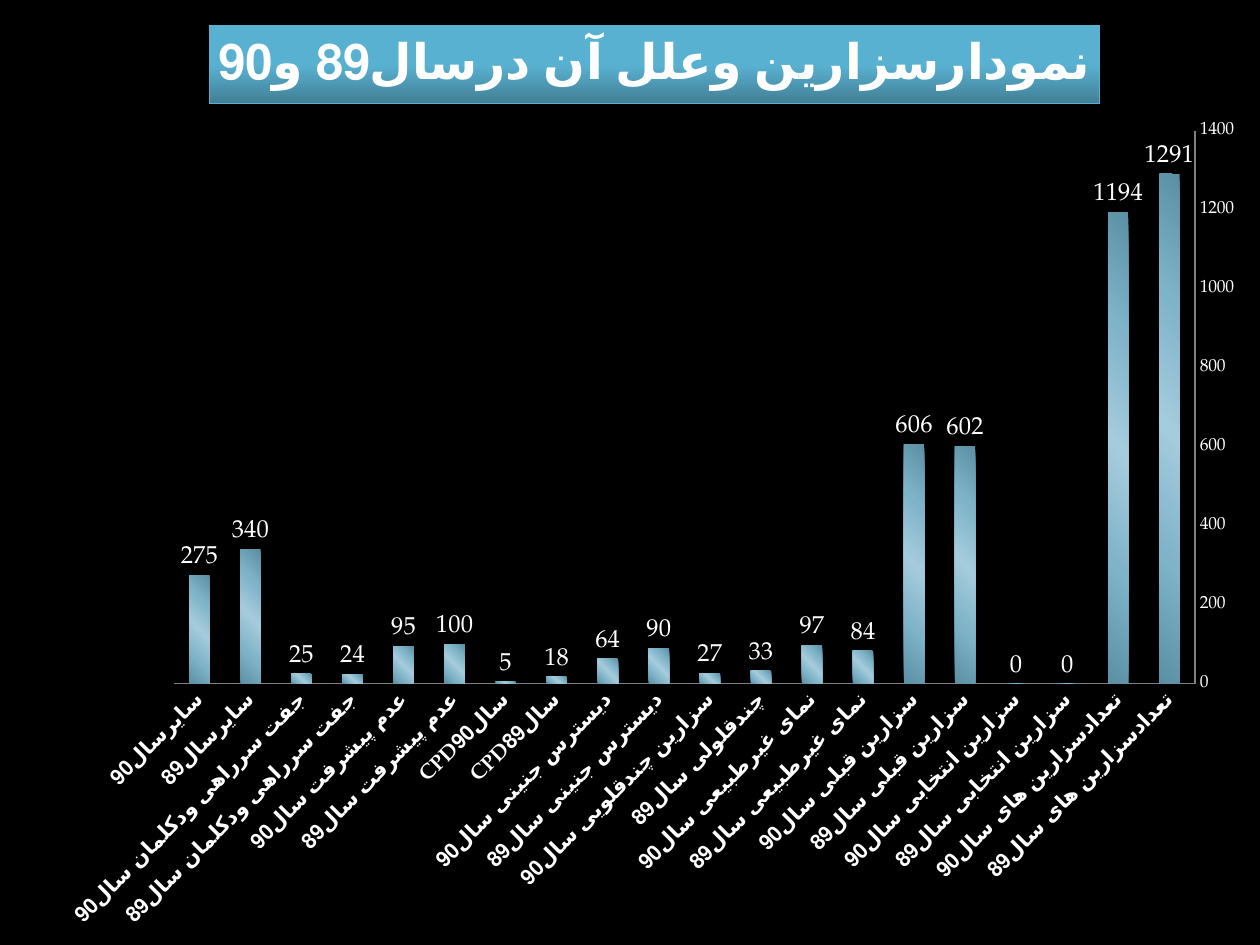
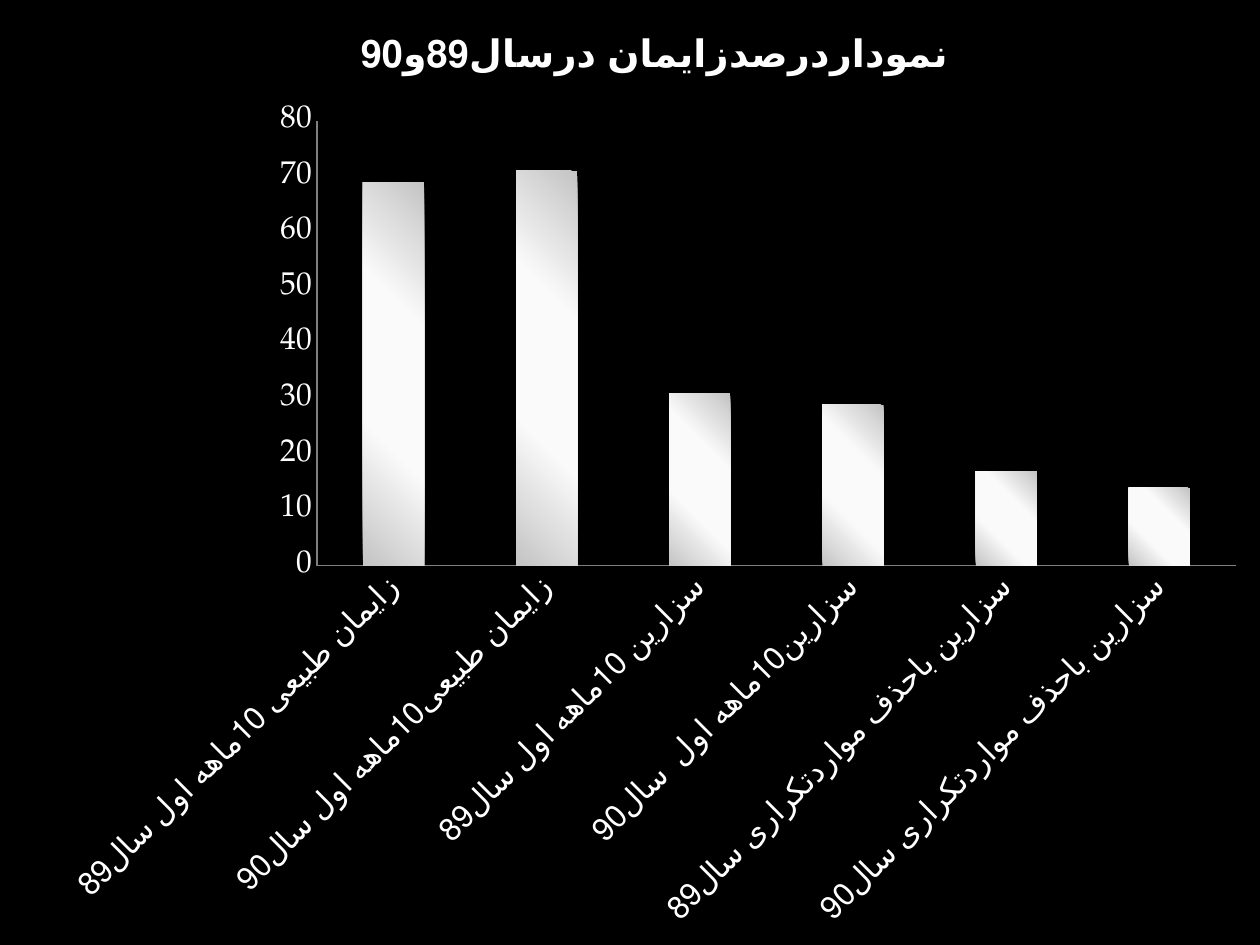
from dataclasses import dataclass

from lxml import etree
from pptx import Presentation
from pptx.chart.data import CategoryChartData
from pptx.dml.color import RGBColor
from pptx.enum.chart import XL_CHART_TYPE, XL_LABEL_POSITION, XL_TICK_MARK
from pptx.oxml.ns import qn
from pptx.util import Pt

COLUMNS = XL_CHART_TYPE.COLUMN_CLUSTERED
ABOVE_COLUMN = XL_LABEL_POSITION.OUTSIDE_END
NO_TICK = XL_TICK_MARK.NONE

EMU_PER_PX = 914400 / 126
SLIDE_SIZE = (1260, 945)
CHART_BOX = (49, 0, 1211, 945)


@dataclass(frozen=True)
class Theme:
    font: str = "TeX Gyre Pagella"
    background: str = "000000"
    text: str = "FFFFFF"
    axis: str = "808080"
    banner: tuple = ("59B1D1", "59B1D1", "427F95")
    banner_edge: str = "59B1D1"
    blue_columns: tuple = ("5B8FA3", "7FB3C8", "A5CCDC", "7FB3C8", "5B8FA3")
    white_columns: tuple = ("C4C4C4", "FAFAFA", "FAFAFA", "C4C4C4")
    banner_size: int = 28
    title_size: float = 21.6
    large: int = 18
    value_label: int = 14
    category: int = 12
    small: int = 10


THEME = Theme()

CAUSES = [
    ("تعدادسزارین های سال89", 1291),
    ("تعدادسزارین های سال90", 1194),
    ("سزارین انتخابی سال89", 0),
    ("سزارین انتخابی سال90", 0),
    ("سزارین قبلی سال89", 602),
    ("سزارین قبلی سال90", 606),
    ("نمای غیرطبیعی سال89", 84),
    ("نمای غیرطبیعی سال90", 97),
    ("چندقلولی سال89", 33),
    ("سزارین چندقلویی سال90", 27),
    ("دیسترس جنینی سال89", 90),
    ("دیسترس جنینی سال90", 64),
    ("CPDسال89", 18),
    ("CPDسال90", 5),
    ("عدم پیشرفت سال89", 100),
    ("عدم پیشرفت سال90", 95),
    ("جفت سرراهی ودکلمان سال89", 24),
    ("جفت سرراهی ودکلمان سال90", 25),
    ("سایرسال89", 340),
    ("سایرسال90", 275),
]

BIRTH_PERCENTAGES = [
    ("زایمان طبیعی 10ماهه اول سال89", 69),
    ("زایمان طبیعی10ماهه اول سال90", 71),
    ("سزارین 10ماهه اول سال89", 31),
    ("سزارین10ماهه اول  سال90", 29),
    ("سزارین باحذف مواردتکراری سال89", 17),
    ("سزارین باحذف مواردتکراری سال90", 14),
]


def px(length):
    return round(length * EMU_PER_PX)


def rgb(colour):
    return RGBColor.from_string(colour)


def style_font(font, size, bold=False):
    font.name = THEME.font
    font.size = Pt(size)
    font.bold = bold
    font.color.rgb = rgb(THEME.text)


def fill_gradient(part, stops_path, chart, colours, angle):
    """Spread the colours evenly along a linear gradient."""
    part.format.fill.gradient()
    part.format.fill.gradient_angle = angle
    stops = chart.element.xpath(stops_path)[0]
    for stop in list(stops):
        stops.remove(stop)
    for index, colour in enumerate(colours):
        position = round(100000 * index / (len(colours) - 1))
        stop = etree.SubElement(stops, qn("a:gs"), pos=str(position))
        etree.SubElement(stop, qn("a:srgbClr"), val=colour)


def place_plot(chart, box, plot_box):
    """Fix the inner plot area, given in px within the chart box."""
    plot_area = chart.element.xpath(".//c:plotArea")[0]
    for automatic in plot_area.findall(qn("c:layout")):
        plot_area.remove(automatic)
    layout = etree.Element(qn("c:layout"))
    plot_area.insert(0, layout)
    manual = etree.SubElement(layout, qn("c:manualLayout"))
    left, top, width, height = plot_box
    settings = {
        "layoutTarget": "inner", "xMode": "edge", "yMode": "edge",
        "x": left / box[2], "y": top / box[3],
        "w": width / box[2], "h": height / box[3],
    }
    for tag, value in settings.items():
        text = value if isinstance(value, str) else f"{value:.4f}"
        etree.SubElement(manual, qn(f"c:{tag}"), val=text)


def set_title(chart, text, size):
    frame = chart.chart_title.text_frame
    run = frame.paragraphs[0].add_run()
    run.text = text
    style_font(run.font, size, bold=True)
    chart.chart_title.include_in_layout = False


def style_axes(chart, top_value, step, value_size, category_size, bold):
    values, categories = chart.value_axis, chart.category_axis
    for axis, size, heavy in ((values, value_size, False),
                              (categories, category_size, bold)):
        axis.major_tick_mark = axis.minor_tick_mark = NO_TICK
        axis.has_major_gridlines = False
        axis.format.line.color.rgb = rgb(THEME.axis)
        axis.format.line.width = Pt(0.75)
        style_font(axis.tick_labels.font, size, heavy)
    values.minimum_scale, values.maximum_scale = 0, top_value
    values.major_unit = step
    values.tick_labels.number_format = "0"
    values.tick_labels.number_format_is_linked = False
    body = chart.element.xpath(".//c:catAx/c:txPr/a:bodyPr")[0]
    body.set("rot", str(-45 * 60000))
    body.set("vert", "horz")


def add_column_chart(slide, box, rows, plot_box, colours, base_size):
    data = CategoryChartData()
    data.categories = [category for category, _ in rows]
    data.add_series("Series 1", [value for _, value in rows])
    frame = slide.shapes.add_chart(COLUMNS, *map(px, box), data)
    chart = frame.chart
    chart.has_legend = False
    style_font(chart.font, base_size)
    place_plot(chart, box, plot_box)
    plot = chart.plots[0]
    plot.gap_width = 150
    plot.vary_by_categories = False
    series = plot.series[0]
    series.invert_if_negative = False
    fill_gradient(series, ".//c:ser/c:spPr//a:gsLst", chart, colours, 225)
    return chart


def label_columns(chart):
    plot = chart.plots[0]
    plot.has_data_labels = True
    labels = plot.data_labels
    labels.show_value = True
    labels.position = ABOVE_COLUMN
    style_font(labels.font, THEME.value_label)


def add_black_slide(deck):
    slide = deck.slides.add_slide(deck.slide_layouts[6])
    background = slide.background.fill
    background.solid()
    background.fore_color.rgb = rgb(THEME.background)
    return slide


def build_causes_slide(deck, box):
    chart = add_column_chart(add_black_slide(deck), box, CAUSES,
                             (125, 131, 1021, 553), THEME.blue_columns,
                             THEME.small)
    set_title(chart, "نمودارسزارین وعلل آن درسال89 و90", THEME.banner_size)
    banner = chart.chart_title
    fill_gradient(banner, ".//c:title/c:spPr//a:gsLst", chart,
                  THEME.banner, 270)
    banner.format.line.color.rgb = rgb(THEME.banner_edge)
    style_axes(chart, 1400, 200, THEME.small, THEME.category, bold=True)
    chart.category_axis.reverse_order = True
    label_columns(chart)


def build_percentages_slide(deck, box):
    chart = add_column_chart(add_black_slide(deck), box, BIRTH_PERCENTAGES,
                             (268, 121, 919, 445), THEME.white_columns,
                             THEME.large)
    set_title(chart, "نموداردرصدزایمان درسال89و90", THEME.title_size)
    style_axes(chart, 80, 10, THEME.large, THEME.large, bold=False)


def main():
    deck = Presentation()
    deck.slide_width, deck.slide_height = map(px, SLIDE_SIZE)
    build_causes_slide(deck, CHART_BOX)
    build_percentages_slide(deck, CHART_BOX)
    deck.save("out.pptx")


if __name__ == "__main__":
    main()
